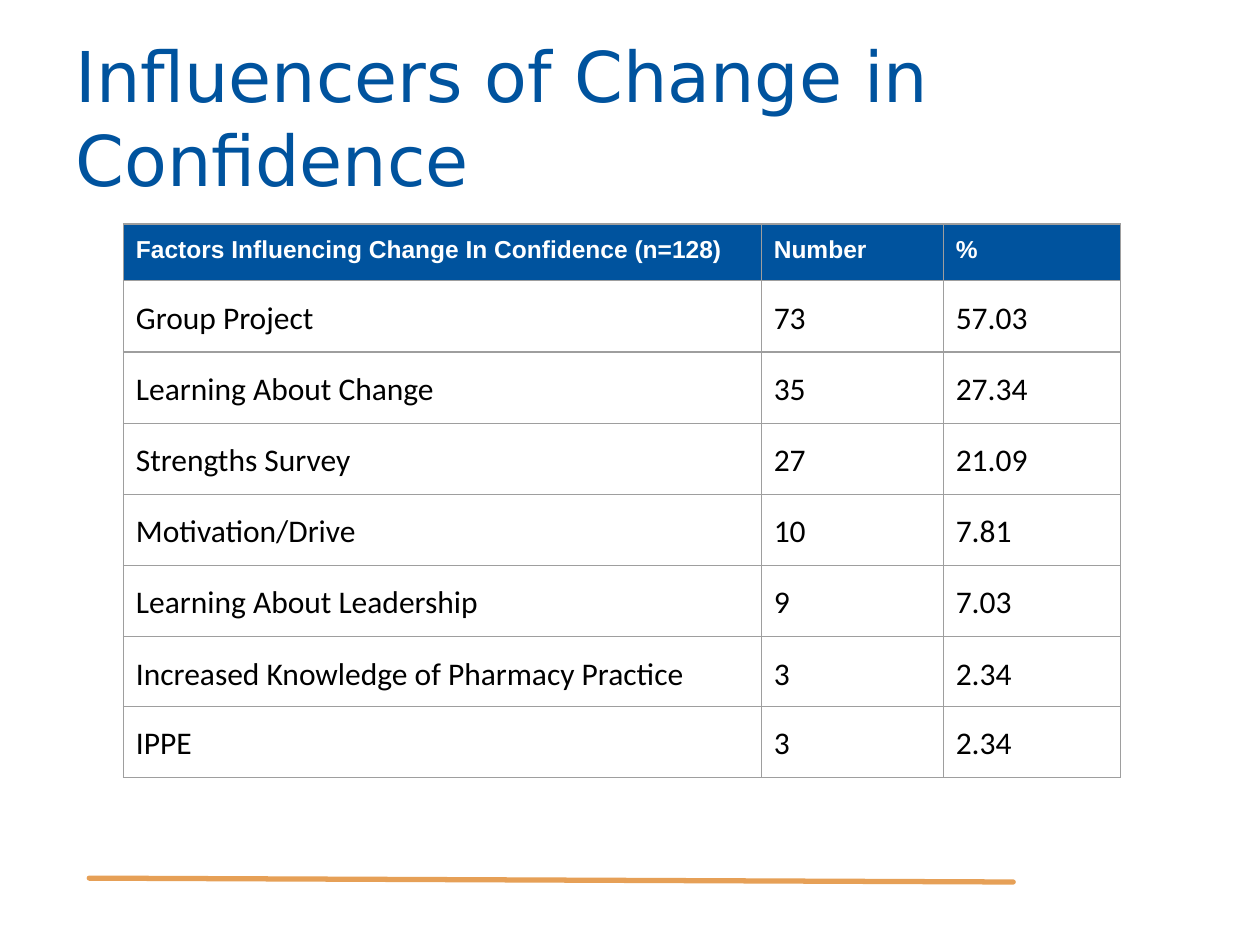
"""Build a slide with a table of factors that influenced change in confidence."""
import pptx
import pptx.dml.color
import pptx.enum.shapes
import pptx.enum.text
import pptx.oxml
import pptx.oxml.ns
import pptx.util

Pt = pptx.util.Pt
BLUE, ORANGE, GREY, WHITE, BLACK = "00539E", "E6A057", "9E9E9E", "FFFFFF", "000000"
TITLE = {"name": "DejaVu Sans", "size": Pt(40), "bold": False, "color": BLUE}
HEADER = {"name": "Arial", "size": Pt(14), "bold": True, "color": WHITE}
BODY = {"name": "Calibri", "size": Pt(18), "bold": False, "color": BLACK}
ROWS = [
    ("Factors Influencing Change In Confidence (n=128)", "Number", "%"),
    ("Group Project", "73", "57.03"),
    ("Learning About Change", "35", "27.34"),
    ("Strengths Survey", "27", "21.09"),
    ("Motivation/Drive", "10", "7.81"),
    ("Learning About Leadership", "9", "7.03"),
    ("Increased Knowledge of Pharmacy Practice", "3", "2.34"),
    ("IPPE", "3", "2.34"),
]
COLUMN_WIDTHS = [364.5, 104, 101.5]
ROW_HEIGHTS = [32.5] + [40.7] * 5 + [39.5, 40.7]


def rgb(value):
    return pptx.dml.color.RGBColor.from_string(value)


def assign(target, values):
    for name, value in values.items():
        setattr(target, name, value)


def element(xml):
    return pptx.oxml.parse_xml(xml.replace(">", f" {pptx.oxml.ns.nsdecls('a')}>", 1))


class SlideBuilder:
    def __init__(self, deck):
        self.page = deck.slides.add_slide(deck.slide_layouts[5])

    def text(self, frame, content, style, line_spacing=1.0):
        para = frame.paragraphs[0]
        assign(para, {"alignment": pptx.enum.text.PP_ALIGN.LEFT,
                      "line_spacing": line_spacing, "space_before": Pt(0)})
        span = para.add_run()
        span.text = content
        assign(span.font, {k: v for k, v in style.items() if k != "color"})
        span.font.color.rgb = rgb(style["color"])

    def title(self, content, left, top, width, height):
        box = self.page.shapes.title
        assign(box, {"left": Pt(left), "top": Pt(top), "width": Pt(width), "height": Pt(height)})
        assign(box.text_frame, {
            "word_wrap": True,
            "auto_size": pptx.enum.text.MSO_AUTO_SIZE.NONE,
            "vertical_anchor": pptx.enum.text.MSO_ANCHOR.MIDDLE,
            "margin_left": Pt(7.2), "margin_right": Pt(7.2),
            "margin_top": Pt(3.6), "margin_bottom": Pt(3.6)})
        self.text(box.text_frame, content, TITLE)

    def rule(self, start, end, color, weight):
        line = self.page.shapes.add_connector(
            pptx.enum.shapes.MSO_CONNECTOR.STRAIGHT, *map(Pt, start + end))
        line.line.color.rgb = rgb(color)
        line.line.width = Pt(weight)
        line.line._get_or_add_ln().set("cap", "rnd")
        line._element.spPr.append(element("<a:effectLst></a:effectLst>"))

    def border(self, cell, color, weight):
        properties = cell._tc.get_or_add_tcPr()
        for side in "LRTB":
            properties.append(element(
                f'<a:ln{side} w="{Pt(weight)}"><a:solidFill><a:srgbClr val="{color}"/>'
                f"</a:solidFill></a:ln{side}>"))

    def table(self, rows, left, top, widths, heights):
        grid = self.page.shapes.add_table(
            len(rows), len(widths), Pt(left), Pt(top), Pt(sum(widths)), Pt(sum(heights))).table
        grid.horz_banding = False
        for column, width in zip(grid.columns, widths):
            column.width = Pt(width)
        for index, (row, height, contents) in enumerate(zip(grid.rows, heights, rows)):
            row.height = Pt(height)
            for cell, content in zip(row.cells, contents):
                assign(cell, {f"margin_{side}": Pt(7.2)
                              for side in ("left", "right", "top", "bottom")})
                self.border(cell, GREY, 0.75)
                if index == 0:
                    cell.fill.solid()
                    cell.fill.fore_color.rgb = rgb(BLUE)
                    self.text(cell.text_frame, content, HEADER)
                else:
                    cell.fill.background()
                    self.text(cell.text_frame, content, BODY, 1.15)


def main():
    deck = pptx.Presentation()
    assign(deck, {"slide_width": Pt(720), "slide_height": Pt(540)})
    slide = SlideBuilder(deck)
    slide.rule((51, 501.8), (579, 504), ORANGE, 3)
    slide.title("Influencers of Change in Confidence", 36, 21.6, 648, 90)
    slide.table(ROWS, 70.5, 128, COLUMN_WIDTHS, ROW_HEIGHTS)
    deck.save("out.pptx")


if __name__ == "__main__":
    main()
